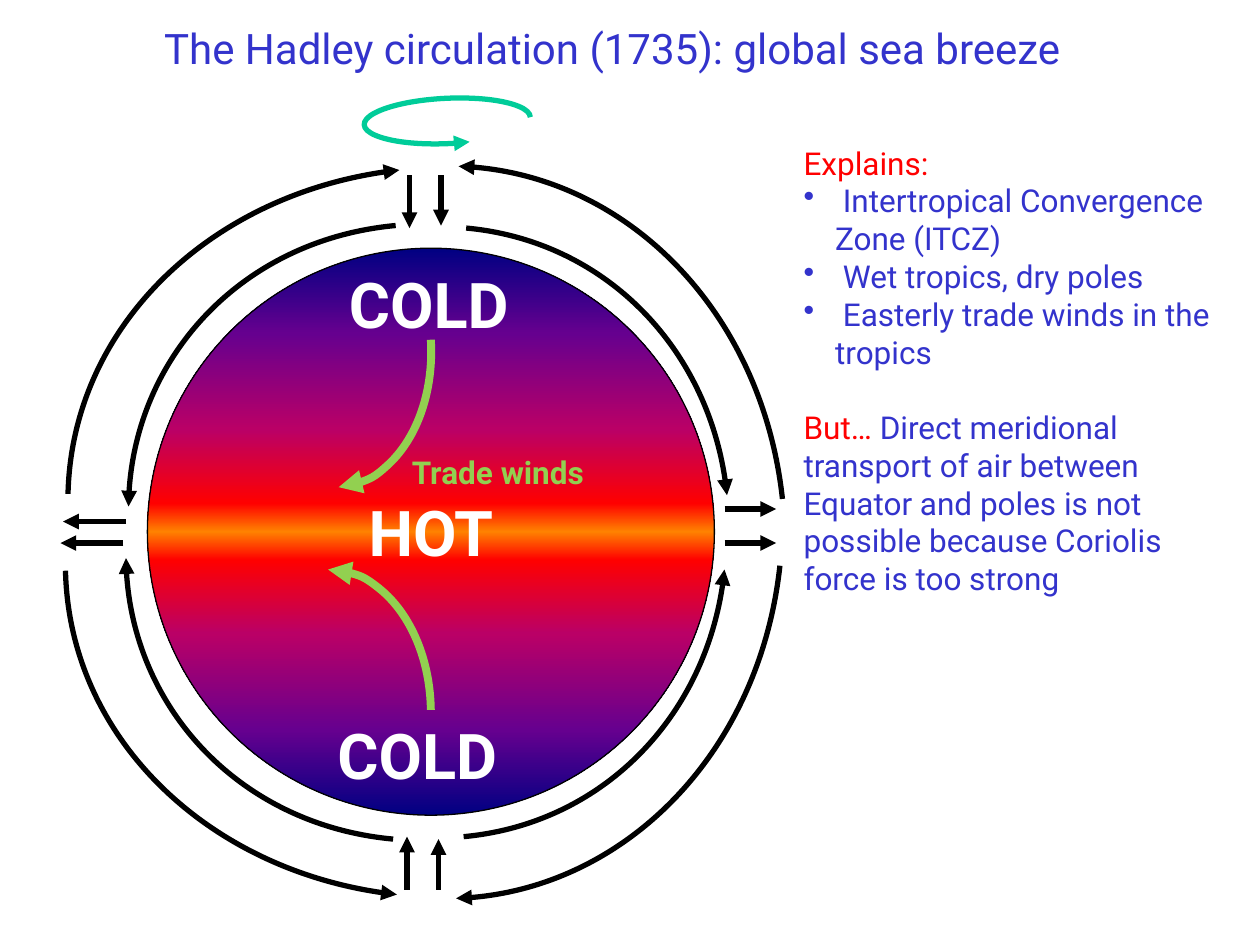
from lxml import etree
from pptx import Presentation
from pptx.dml.color import RGBColor
from pptx.enum.shapes import MSO_CONNECTOR, MSO_SHAPE
from pptx.enum.text import MSO_ANCHOR, MSO_AUTO_SIZE, PP_ALIGN
from pptx.oxml.ns import qn
from pptx.util import Inches, Pt

ARC, OVAL, STRAIGHT = MSO_SHAPE.ARC, MSO_SHAPE.OVAL, MSO_CONNECTOR.STRAIGHT
CENTER, LEFT, MIDDLE = PP_ALIGN.CENTER, PP_ALIGN.LEFT, MSO_ANCHOR.MIDDLE


class Theme:
    font = "Roboto"
    title, zone, body = 24, 36, 18
    blue, red, white, black = "3333CC", "FF0000", "FFFFFF", "000000"
    wind, spin = "92D050", "00CC99"
    thin, flow, thick = 0.75, 3, 4.5


TITLE = "The Hadley circulation (1735): global sea breeze"
NOTES = [  # (bulleted, space before, runs)
    (False, 0, [("Explains:", Theme.red)]),
    (True, 0, [(" Intertropical Convergence Zone (ITCZ)", Theme.blue)]),
    (True, 0, [(" Wet tropics, dry poles", Theme.blue)]),
    (True, 0, [(" Easterly trade winds in the tropics", Theme.blue)]),
    (False, 21.5, [("But…", Theme.red),
                   (" Direct meridional transport of air between Equator and poles"
                    " is not possible because Coriolis force is too strong", Theme.blue)]),
]
LABELS = [  # text, box, size, colour
    ("COLD", (2.67, 2.06, 1.62, 0.7), Theme.zone, Theme.white),
    ("COLD", (2.58, 5.64, 1.62, 0.7), Theme.zone, Theme.white),
    ("Trade winds", (3.17, 3.55, 1.66, 0.4), Theme.body, Theme.wind),
]
GLOBE = (1.17, 1.97, 4.5, 4.5)
# Pole to Equator, then mirrored back to the other pole
HALF_GLOBE = [(0, "000082"), (15, "66008F"), (32, "BA0066"), (45, "FF0000")]
EQUATOR = [(50, "FF8200")]

# Northern cell, each flow from its start to its arrow tip
NORTH_CURVES = [
    [(3.14, 1.79), (1.94, 1.9), (1.03, 2.87), (1.02, 4.02)],
    [(0.54, 3.92), (0.57, 2.61), (1.7, 1.51), (3.17, 1.35)],
    [(3.7, 1.81), (4.79, 1.91), (5.66, 2.8), (5.77, 3.93)],
    [(6.21, 3.96), (6.05, 2.49), (4.94, 1.36), (3.64, 1.32)],
]
NORTH_ARROWS = [
    [(1, 4.14), (0.5, 4.14)],
    [(3.25, 1.39), (3.25, 1.81)],
    [(3.5, 1.39), (3.5, 1.79)],
]
EAST_ARROWS = [[(5.75, y), (6.16, y)] for y in (4.04, 4.31)]
MIRROR_SUM, MIRROR_SHIFT = 8.45, -0.02

ARCS = [  # box, rotation, flip, start and end, colour, width
    ((1.47, 1.92, 2.27, 1.63), 85.8, None, (162.9, 0), Theme.wind, Theme.thick),
    ((1.47, 4.84, 2.27, 1.63), 90, "flipH", (162.9, 0), Theme.wind, Theme.thick),
    ((3.37, 0.3, 0.36, 1.32), 267.4, "flipV", (162, 134.63), Theme.spin, Theme.flow),
]


def rgb(code):
    return RGBColor.from_string(code)


def inches(values):
    return [Inches(v) for v in values]


def style_font(font, size, color, bold=None):
    font.name, font.size, font.bold = Theme.font, Pt(size), bold
    font.color.rgb = rgb(color)


def write(frame, text, size, color, bold=None, align=CENTER):
    frame.text = text
    line = frame.paragraphs[0]
    line.alignment = align
    style_font(line.font, size, color, bold)


def style_arrow(shape, color, width):
    """Colour the line and put a triangle at its end."""
    shape.line.color.rgb = rgb(color)
    shape.line.width = Pt(width)
    outline = shape._element.spPr.find(qn("a:ln"))
    etree.SubElement(outline, qn("a:tailEnd"), type="triangle")


def mirrored(flow):
    """Reflect a northern flow into the southern hemisphere."""
    return [(x + MIRROR_SHIFT, MIRROR_SUM - y) for x, y in flow]


def add_curve(shapes, flow):
    """Draw an open cubic curve through its start, two controls and tip."""
    start, *rest = [inches(point) for point in flow]
    builder = shapes.build_freeform(*start)
    builder.add_line_segments(rest, close=False)
    curve = builder.convert_to_shape()
    segments = list(curve._element.iter(qn("a:lnTo")))
    outline = segments[0].getparent()
    bezier = etree.SubElement(outline, qn("a:cubicBezTo"))
    for segment in segments:
        bezier.append(segment[0])
        outline.remove(segment)
    curve.fill.background()
    curve.shadow.inherit = False
    style_arrow(curve, Theme.black, Theme.flow)


def add_arrow(shapes, flow):
    start, tip = flow
    arrow = shapes.add_connector(STRAIGHT, *inches(start + tip))
    style_arrow(arrow, Theme.black, Theme.flow)
    etree.SubElement(arrow._element.spPr, qn("a:effectLst"))


def add_arc(shapes, box, rotation, flip, ends, color, width):
    arc = shapes.add_shape(ARC, *inches(box))
    arc.rotation = rotation
    arc.adjustments[0], arc.adjustments[1] = ends
    if flip:
        arc._element.spPr.xfrm.set(flip, "1")
    arc.fill.background()
    arc.shadow.inherit = False
    style_arrow(arc, color, width)


def add_globe(shapes):
    globe = shapes.add_shape(OVAL, *inches(GLOBE))
    globe.shadow.inherit = False
    globe.line.color.rgb = rgb(Theme.black)
    globe.line.width = Pt(Theme.thin)
    globe.fill.gradient()
    globe.fill.gradient_angle = 90
    stops = globe._element.spPr.find(qn("a:gradFill")).find(qn("a:gsLst"))
    for stop in list(stops):
        stops.remove(stop)
    southern = [(100 - share, color) for share, color in reversed(HALF_GLOBE)]
    for share, color in HALF_GLOBE + EQUATOR + southern:
        stop = etree.SubElement(stops, qn("a:gs"), pos=str(share * 1000))
        etree.SubElement(stop, qn("a:srgbClr"), val=color)
    globe.text_frame.word_wrap = False
    globe.text_frame.vertical_anchor = MIDDLE
    write(globe.text_frame, "HOT", Theme.zone, Theme.white, True)


def add_notes(shapes):
    frame = shapes.add_textbox(*inches((6.28, 1.09, 3.67, 3.74))).text_frame
    frame.word_wrap = True
    for i, (bulleted, gap, runs) in enumerate(NOTES):
        line = frame.add_paragraph() if i else frame.paragraphs[0]
        line.space_before = Pt(gap)
        if bulleted:
            props = line._p.get_or_add_pPr()
            props.set("marL", str(Inches(0.25)))
            props.set("indent", str(-Inches(0.25)))
            etree.SubElement(props, qn("a:buChar"), char="•")
        style_font(line.font, Theme.body, runs[0][1])
        for text, color in runs:
            run = line.add_run()
            run.text = text
            if color != runs[0][1]:
                run.font.color.rgb = rgb(color)


def main():
    deck = Presentation()
    deck.slide_width, deck.slide_height = inches((10, 7.5))
    slide = deck.slides.add_slide(deck.slide_layouts[5])
    shapes = slide.shapes

    title = shapes.title
    title.left, title.top, title.width, title.height = inches((0.32, -0.25, 9.08, 1.25))
    title.text_frame.vertical_anchor = MIDDLE
    title.text_frame.auto_size = MSO_AUTO_SIZE.NONE
    write(title.text_frame, TITLE, Theme.title, Theme.blue)

    add_globe(shapes)
    for flow in NORTH_CURVES + [mirrored(f) for f in NORTH_CURVES]:
        add_curve(shapes, flow)
    for flow in NORTH_ARROWS + [mirrored(f) for f in NORTH_ARROWS] + EAST_ARROWS:
        add_arrow(shapes, flow)
    add_notes(shapes)
    for arc in ARCS:
        add_arc(shapes, *arc)
    for text, box, size, color in LABELS:
        frame = shapes.add_textbox(*inches(box)).text_frame
        frame.word_wrap = False
        write(frame, text, size, color, True, LEFT)

    deck.save("out.pptx")


if __name__ == "__main__":
    main()
